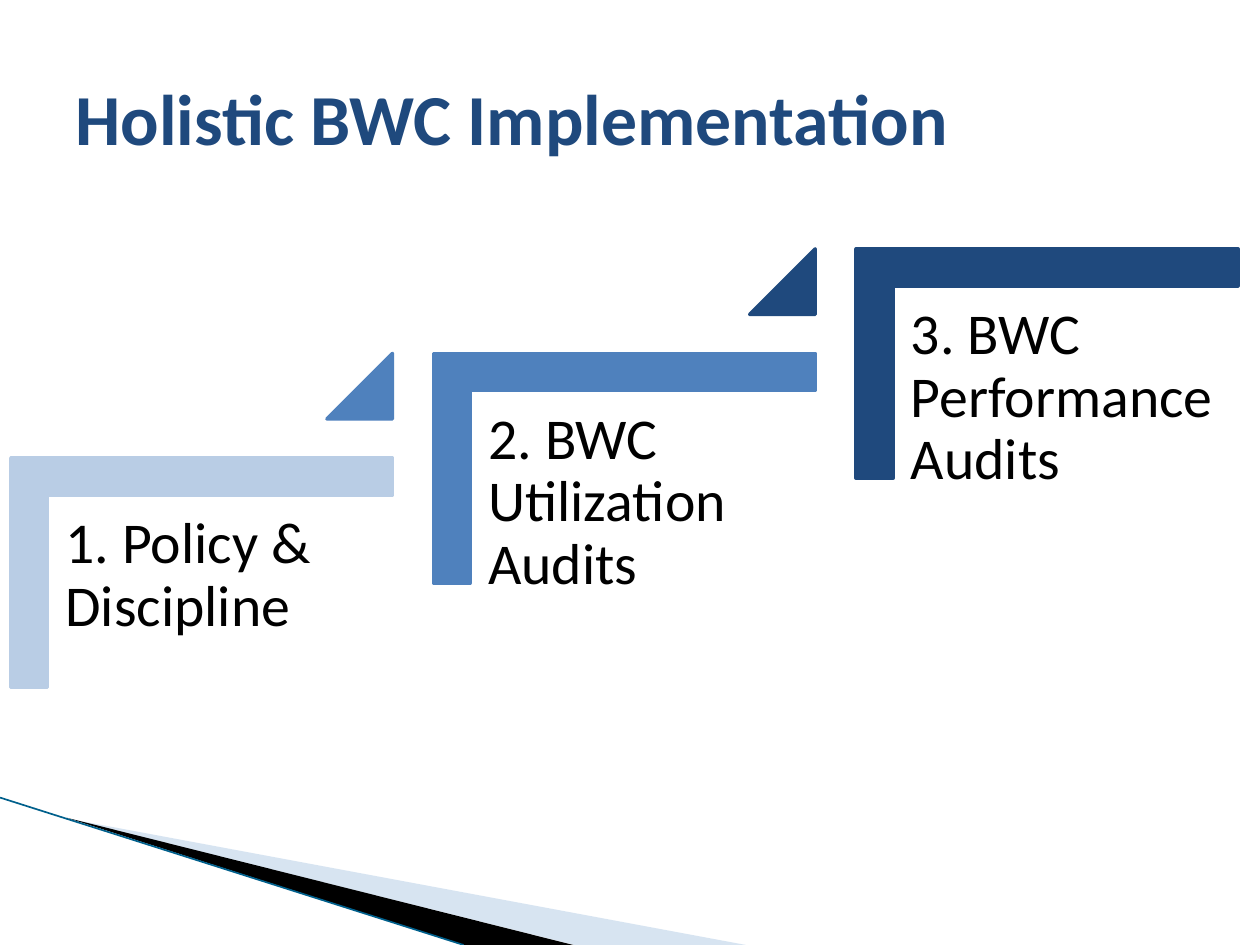
from lxml.etree import SubElement
from pptx import Presentation
from pptx.dml.color import RGBColor
from pptx.enum.shapes import MSO_CONNECTOR as Connector, MSO_SHAPE as Shape
from pptx.enum.text import MSO_ANCHOR as Anchor
from pptx.oxml.ns import qn
from pptx.util import Inches, Pt

# Slide grid: 100 columns by 75 rows of square cells
COLS, ROWS = 100, 75
CELL = Inches(0.1)
COLORS = {
    "title": "1F497D", "text": "000000", "light": "B9CDE5", "mid": "4F81BD",
    "dark": "1F497D", "pale": "9DBDDE", "black": "000000", "edge": "00608C",
}
FONT = "Calibri"
STEPS = [
    ("1. Policy & Discipline", "light"),
    ("2. BWC Utilization Audits", "mid"),
    ("3. BWC Performance Audits", "dark"),
]


def cells(*counts):
    return [round(count * CELL) for count in counts]


def color(name):
    return RGBColor.from_string(COLORS[name])


def add_text(slide, text, box, size, tint="text", bold=False,
             anchor=Anchor.TOP, inset=None, spacing=None):
    frame = slide.shapes.add_textbox(*cells(*box)).text_frame
    frame.word_wrap = True
    frame.vertical_anchor = anchor
    if inset is not None:
        frame.margin_left = frame.margin_right = Inches(inset)
        frame.margin_top = frame.margin_bottom = Inches(inset)
    paragraph = frame.paragraphs[0]
    paragraph.line_spacing = spacing
    run = paragraph.add_run()
    run.text = text
    run.font.name, run.font.size, run.font.bold = FONT, Pt(size), bold
    run.font.color.rgb = color(tint)


def paint(shape, tint, outline=None):
    shape.shadow.inherit = False
    shape.fill.solid()
    shape.fill.fore_color.rgb = color(tint)
    if outline:
        shape.line.color.rgb = color(tint)
        shape.line.width = Pt(outline)
    else:
        shape.line.fill.background()


def add_wedge(slide, points, tint, opacity=100):
    start, *others = [cells(*point) for point in points]
    builder = slide.shapes.build_freeform(*start, scale=1.0)
    builder.add_line_segments(others, close=True)
    wedge = builder.convert_to_shape()
    paint(wedge, tint)
    if opacity < 100:
        fill_color = wedge._element.spPr.find(qn("a:solidFill"))[0]
        SubElement(fill_color, qn("a:alpha"), val=str(opacity * 1000))


def add_swoosh(slide, top, bottom):
    """Wedges fanning out from the left edge to the foot of the slide."""
    tip = top + 1.7
    add_wedge(slide, [(5.5, tip), (59.2, bottom), (45.6, bottom)], "pale", 40)
    add_wedge(slide, [(5.3, tip - 0.1), (45.5, bottom), (36.8, bottom)], "black")
    edge = slide.shapes.add_connector(
        Connector.STRAIGHT, *cells(0, top, 36.8, bottom))
    edge.line.color.rgb = color("edge")
    edge.line.width = Pt(0.95)
    SubElement(edge._element.spPr, qn("a:effectLst"))


def add_step(slide, box, text, tint):
    """A corner bracket around the step's label."""
    left, top, width, height = box
    # The corner preset is turned a quarter, so its sides swap about the centre
    turn = (width - height) / 2
    bracket = slide.shapes.add_shape(
        Shape.CORNER, *cells(left + turn, top - turn, height, width))
    bracket.rotation = 90
    bracket.adjustments[0] = bracket.adjustments[1] = 0.161
    paint(bracket, tint, outline=2)
    add_text(slide, text, (left + 2.95, top + 3.05, 27.4, 24), 33,
             inset=0.14, spacing=0.9)


def add_staircase(slide, box, steps):
    """Steps rising to the right, with a pointer up to each next one."""
    left, top, width, height = box
    step_width, step_height, pointer = 30.3, 18.2, 5.2
    across = (width - step_width) / (len(steps) - 1)
    rise = (height - step_height) / (len(steps) - 1)
    for index, (text, tint) in enumerate(steps):
        step_left = left + index * across
        step_top = top + height - step_height - index * rise
        if index:
            previous_right = step_left - across + step_width
            triangle = slide.shapes.add_shape(
                Shape.ISOSCELES_TRIANGLE,
                *cells(previous_right - pointer, step_top, pointer, pointer))
            triangle.adjustments[0] = 1
            paint(triangle, tint, outline=2)
        add_step(slide, (step_left, step_top, step_width, step_height),
                 text, tint)


def main():
    deck = Presentation()
    deck.slide_width, deck.slide_height = cells(COLS, ROWS)
    slide = deck.slides.add_slide(deck.slide_layouts[6])
    add_swoosh(slide, 63.3, ROWS)
    add_text(slide, "Holistic BWC Implementation", (5, 3, 90, 12.5), 41,
             tint="title", bold=True, anchor=Anchor.MIDDLE)
    add_staircase(slide, (0.85, 19.75, 97.4, 34.8), STEPS)
    deck.save("out.pptx")


if __name__ == "__main__":
    main()
